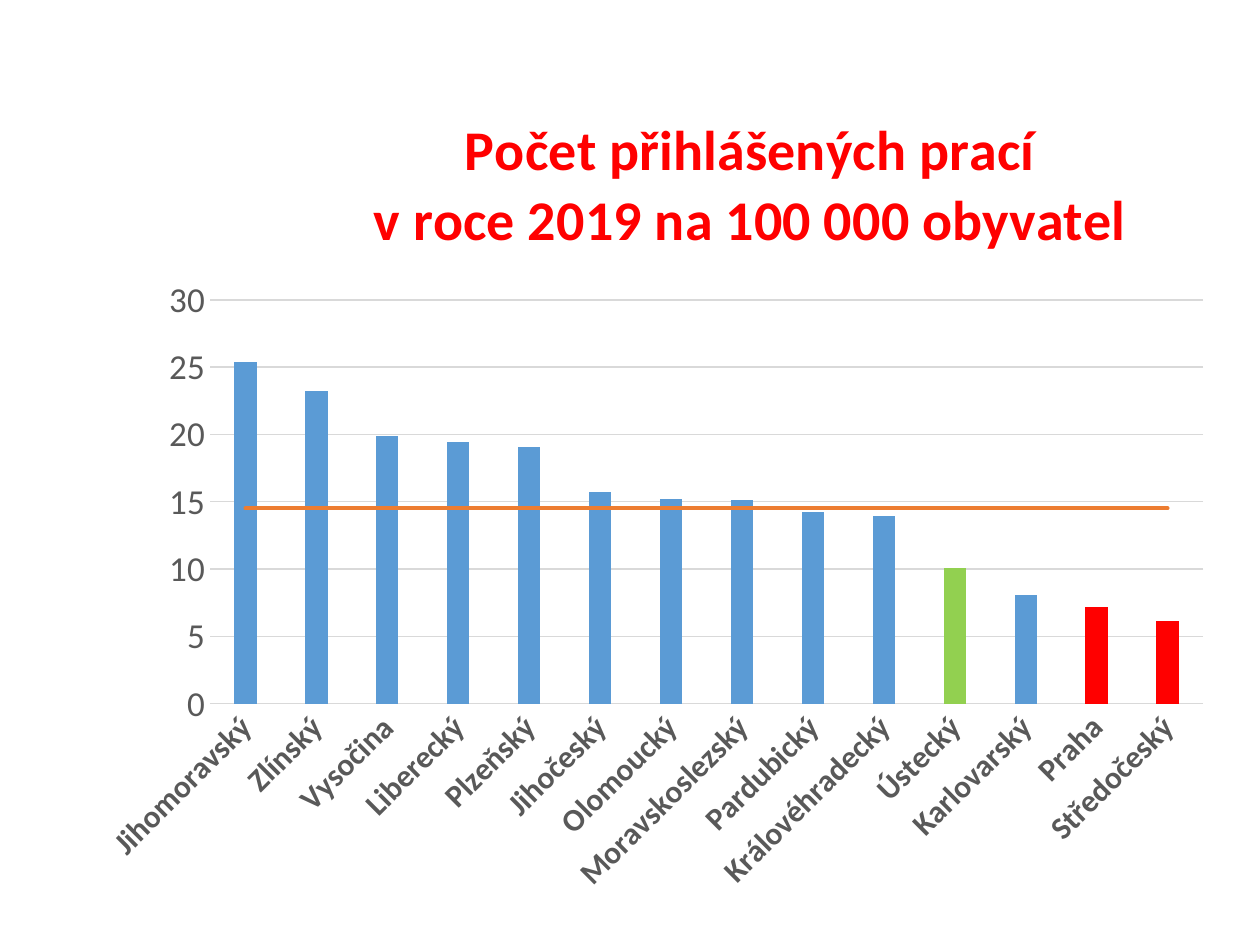
from copy import deepcopy
from dataclasses import dataclass

from lxml.etree import SubElement
from pptx import Presentation
from pptx.chart.chart import Chart
from pptx.chart.data import CategoryChartData
from pptx.dml.color import RGBColor
from pptx.enum.chart import XL_CHART_TYPE as ChartType
from pptx.enum.chart import XL_MARKER_STYLE as Marker
from pptx.enum.chart import XL_TICK_MARK as Tick
from pptx.oxml import parse_xml
from pptx.oxml.ns import nsdecls, qn
from pptx.util import Inches, Pt

BLUE = RGBColor(0x5B, 0x9B, 0xD5)
GREEN = RGBColor(0x92, 0xD0, 0x50)
RED = RGBColor(0xFF, 0x00, 0x00)
ORANGE = RGBColor(0xED, 0x7D, 0x31)
GRAY = RGBColor(0x59, 0x59, 0x59)
LIGHT_GRAY = RGBColor(0xD9, 0xD9, 0xD9)
BLACK = RGBColor(0x00, 0x00, 0x00)
AVERAGE = 14.5
TITLE = ("Počet přihlášených prací", "v roce 2019 na 100 000 obyvatel")


@dataclass(frozen=True)
class Region:
    name: str
    entries: float
    color: RGBColor = BLUE


REGIONS = (
    Region("Jihomoravský", 25.4),
    Region("Zlínský", 23.2),
    Region("Vysočina", 19.9),
    Region("Liberecký", 19.4),
    Region("Plzeňský", 19.1),
    Region("Jihočeský", 15.7),
    Region("Olomoucký", 15.2),
    Region("Moravskoslezský", 15.1),
    Region("Pardubický", 14.2),
    Region("Královéhradecký", 13.9),
    Region("Ústecký", 10.1, GREEN),
    Region("Karlovarský", 8.1),
    Region("Praha", 7.2, RED),
    Region("Středočeský", 6.1, RED),
)


def style_font(font, color: RGBColor, **values) -> None:
    for attribute, value in {"name": "Calibri", **values}.items():
        setattr(font, attribute, value)
    font.color.rgb = color


def style_line(line, color: RGBColor, width: float) -> None:
    line.color.rgb = color
    line.width = Pt(width)


def manual_layout(**values):
    layout = parse_xml(f"<c:layout {nsdecls('c')}/>")
    manual = SubElement(layout, qn("c:manualLayout"))
    for tag, value in values.items():
        SubElement(manual, qn(f"c:{tag}")).set("val", str(value))
    return layout


def replace_layout(parent, position: int, layout) -> None:
    for old in parent.findall(qn("c:layout")):
        parent.remove(old)
    parent.insert(position, layout)


def add_title(chart: Chart) -> None:
    frame = chart.chart_title.text_frame
    frame.text = "\n".join(TITLE)
    for paragraph in frame.paragraphs:
        style_font(paragraph.runs[0].font, RED, size=Pt(32), bold=True)
    chart.chart_title.include_in_layout = False
    title = chart._chartSpace.find(f".//{qn('c:title')}")
    replace_layout(title, 1, manual_layout(xMode="edge", yMode="edge", x=0.25, y=0.03))


def style_axes(chart: Chart) -> None:
    regions, entries = chart.category_axis, chart.value_axis
    for axis in (regions, entries):
        axis.major_tick_mark = axis.minor_tick_mark = Tick.NONE
    style_font(regions.tick_labels.font, GRAY, size=Pt(18), bold=True)
    style_font(entries.tick_labels.font, GRAY, size=Pt(20), bold=False)
    regions._element.find(f".//{qn('a:bodyPr')}").set("rot", "-2700000")
    style_line(regions.format.line, LIGHT_GRAY, 0.75)
    entries.format.line.fill.background()
    style_line(entries.major_gridlines.format.line, LIGHT_GRAY, 0.75)
    entries.minimum_scale, entries.maximum_scale, entries.major_unit = 0, 30, 5
    entries.tick_labels.number_format = "0"
    entries.tick_labels.number_format_is_linked = False


def move_average_to_line(chart: Chart) -> None:
    bars = chart._chartSpace.find(f".//{qn('c:barChart')}")
    average = bars.findall(qn("c:ser"))[1]
    for bar_setting in average.findall(qn("c:invertIfNegative")):
        average.remove(bar_setting)
    line = parse_xml(
        f"<c:lineChart {nsdecls('c')}><c:grouping val='standard'/>"
        "<c:varyColors val='0'/></c:lineChart>"
    )
    line.append(average)
    SubElement(line, qn("c:marker")).set("val", "1")
    for axis_id in bars.findall(qn("c:axId")):
        line.append(deepcopy(axis_id))
    bars.addnext(line)


def style_series(chart: Chart) -> None:
    columns, average_plot = chart.plots
    columns.gap_width = 219
    columns.overlap = 0
    columns.vary_by_categories = False
    entries = columns.series[0]
    entries.invert_if_negative = False
    entries.format.fill.solid()
    entries.format.fill.fore_color.rgb = BLUE
    for index, region in enumerate(REGIONS):
        if region.color != BLUE:
            fill = entries.points[index].format.fill
            fill.solid()
            fill.fore_color.rgb = region.color
    average = average_plot.series[0]
    average.smooth = False
    average.marker.style = Marker.NONE
    style_line(average.format.line, ORANGE, 2.25)
    average.format.line._ln.set("cap", "rnd")


def add_entries_chart(slide) -> None:
    data = CategoryChartData(number_format="0.0")
    data.categories = [region.name for region in REGIONS]
    data.add_series("Series 1", [region.entries for region in REGIONS])
    data.add_series("Series 2", [AVERAGE] * len(REGIONS))
    chart = slide.shapes.add_chart(
        ChartType.COLUMN_CLUSTERED,
        Inches(0.67), Inches(0.68), Inches(9.06), Inches(6.54), data,
    ).chart
    chart.has_legend = False
    style_font(chart.font, BLACK, size=Pt(10))
    add_title(chart)
    style_axes(chart)
    move_average_to_line(chart)
    style_series(chart)
    plot_area = chart._chartSpace.find(f".//{qn('c:plotArea')}")
    replace_layout(plot_area, 0, manual_layout(
        layoutTarget="inner", xMode="edge", yMode="edge",
        x=0.11, y=0.26, w=0.87, h=0.49,
    ))


def main() -> None:
    deck = Presentation()
    deck.slide_width, deck.slide_height = Inches(10), Inches(7.5)
    add_entries_chart(deck.slides.add_slide(deck.slide_layouts[6]))
    deck.save("out.pptx")


if __name__ == "__main__":
    main()
